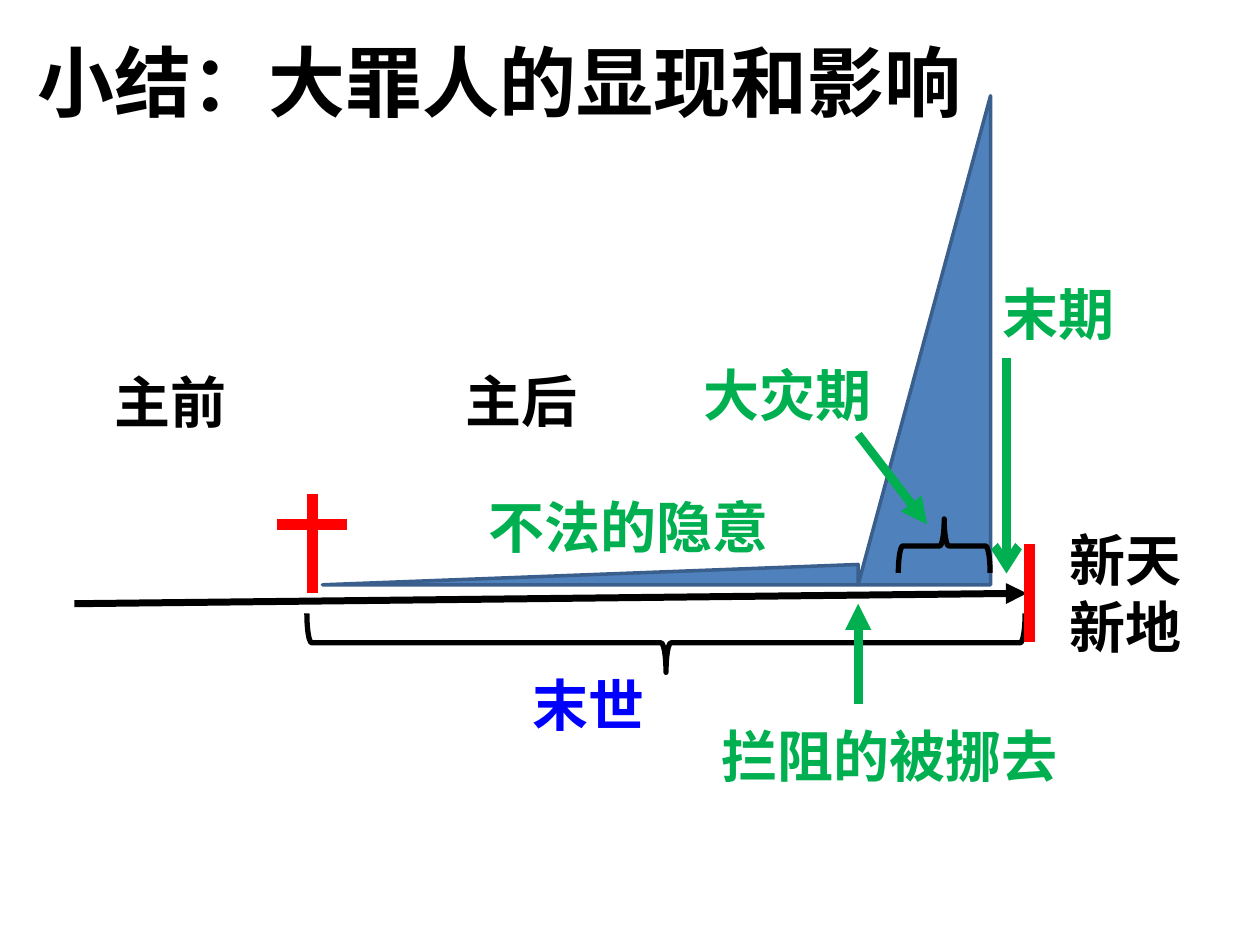
from lxml.etree import SubElement
from pptx import Presentation
from pptx.dml.color import RGBColor
from pptx.enum.shapes import MSO_CONNECTOR, MSO_SHAPE
from pptx.enum.text import MSO_ANCHOR, MSO_AUTO_SIZE
from pptx.oxml.ns import qn
from pptx.util import Cm, Pt

BLACK, RED, GREEN, BLUE = "000000", "FF0000", "00B050", "0000FF"
FILL, OUTLINE = "4F81BD", "3A5F8C"
REMOVAL_X = 17.3  # the moment the restrainer is taken away
CROSS_X = 6.3
END_X = 20.75


def color(hex_code):
    return RGBColor.from_string(hex_code)


def add_label(shapes, text, left, top, width=3.05, height=1.63,
              hex_code=BLACK, size=32):
    label = shapes.add_textbox(Cm(left), Cm(top), Cm(width), Cm(height))
    frame = label.text_frame
    frame.word_wrap = True
    frame.auto_size = MSO_AUTO_SIZE.NONE
    run = frame.paragraphs[0].add_run()
    run.text = text
    run.font.name = "Calibri"
    run.font.size = Pt(size)
    run.font.bold = True
    run.font.color.rgb = color(hex_code)
    return label


def add_line(shapes, start, end, hex_code, width, arrowhead=None):
    line = shapes.add_connector(MSO_CONNECTOR.STRAIGHT,
                                *(Cm(value) for value in (*start, *end)))
    line.line.color.rgb = color(hex_code)
    line.line.width = Pt(width)
    if arrowhead:
        SubElement(line.line._get_or_add_ln(), qn("a:tailEnd"), type=arrowhead)
    SubElement(line.element.spPr, qn("a:effectLst"))


def add_influence(shapes, left, top, width, height):
    """Right triangle rising towards the right."""
    triangle = shapes.add_shape(MSO_SHAPE.RIGHT_TRIANGLE, Cm(left), Cm(top),
                                Cm(width), Cm(height))
    triangle.shadow.inherit = False
    triangle.element.spPr.xfrm.set("flipH", "1")
    triangle.fill.solid()
    triangle.fill.fore_color.rgb = color(FILL)
    triangle.line.color.rgb = color(OUTLINE)
    triangle.line.width = Pt(2)


def add_brace(shapes, left, top, width, height, rotation):
    brace = shapes.add_shape(MSO_SHAPE.RIGHT_BRACE, Cm(left), Cm(top),
                             Cm(width), Cm(height))
    brace.shadow.inherit = False
    brace.rotation = rotation
    brace.fill.background()
    brace.line.color.rgb = color(BLACK)
    brace.line.width = Pt(3)


def main():
    deck = Presentation()
    deck.slide_width, deck.slide_height = Cm(25.4), Cm(19.05)
    shapes = deck.slides.add_slide(deck.slide_layouts[6]).shapes

    # Great influence after the removal, and the title
    add_influence(shapes, REMOVAL_X, 1.93, 2.67, 9.86)
    title = add_label(shapes, "小结：大罪人的显现和影响", 0.51, 0.03,
                      22.86, 3.18, size=44)
    title.text_frame.vertical_anchor = MSO_ANCHOR.MIDDLE

    # Timeline with the cross
    add_line(shapes, (1.5, 12.17), (20.7, 11.96), BLACK, 4, "triangle")
    add_line(shapes, (CROSS_X, 9.96), (CROSS_X, 11.96), RED, 6)
    add_line(shapes, (5.59, 10.57), (6.99, 10.57), RED, 6)
    add_label(shapes, "主前", 2.06, 7.29)
    add_label(shapes, "主后", 9.14, 7.26)

    # Last age, and the end of the timeline
    add_brace(shapes, 12.83, 5.72, 1.19, 14.48, 90)
    add_label(shapes, "末世", 10.49, 13.39, hex_code=BLUE)
    add_line(shapes, (END_X, 10.97), (END_X, 12.95), RED, 6)
    add_label(shapes, "新天新地", 21.31, 10.46, height=3)

    # Final period
    add_line(shapes, (20.29, 7.21), (20.29, 11.56), GREEN, 5, "arrow")
    add_label(shapes, "末期", 19.96, 5.51, hex_code=GREEN)

    # Great tribulation
    add_brace(shapes, 18.49, 10.08, 1.09, 1.85, 270)
    add_line(shapes, (REMOVAL_X, 8.76), (18.69, 10.57), GREEN, 5, "triangle")
    add_label(shapes, "大灾期", 13.94, 7.14, 4.17, hex_code=GREEN)

    # Hidden lawlessness
    hidden = shapes.add_group_shape().shapes
    add_influence(hidden, 6.5, 11.38, REMOVAL_X - 6.5, 0.41)
    add_label(hidden, "不法的隐意", 9.6, 9.8, 6.71, hex_code=GREEN)

    # Removal of the restrainer
    removal = shapes.add_group_shape().shapes
    add_line(removal, (REMOVAL_X, 14.2), (REMOVAL_X, 12.17), GREEN, 5, "triangle")
    add_label(removal, "拦阻的被挪去", 14.3, 14.43, 7.62, hex_code=GREEN)

    deck.save("out.pptx")


if __name__ == "__main__":
    main()
